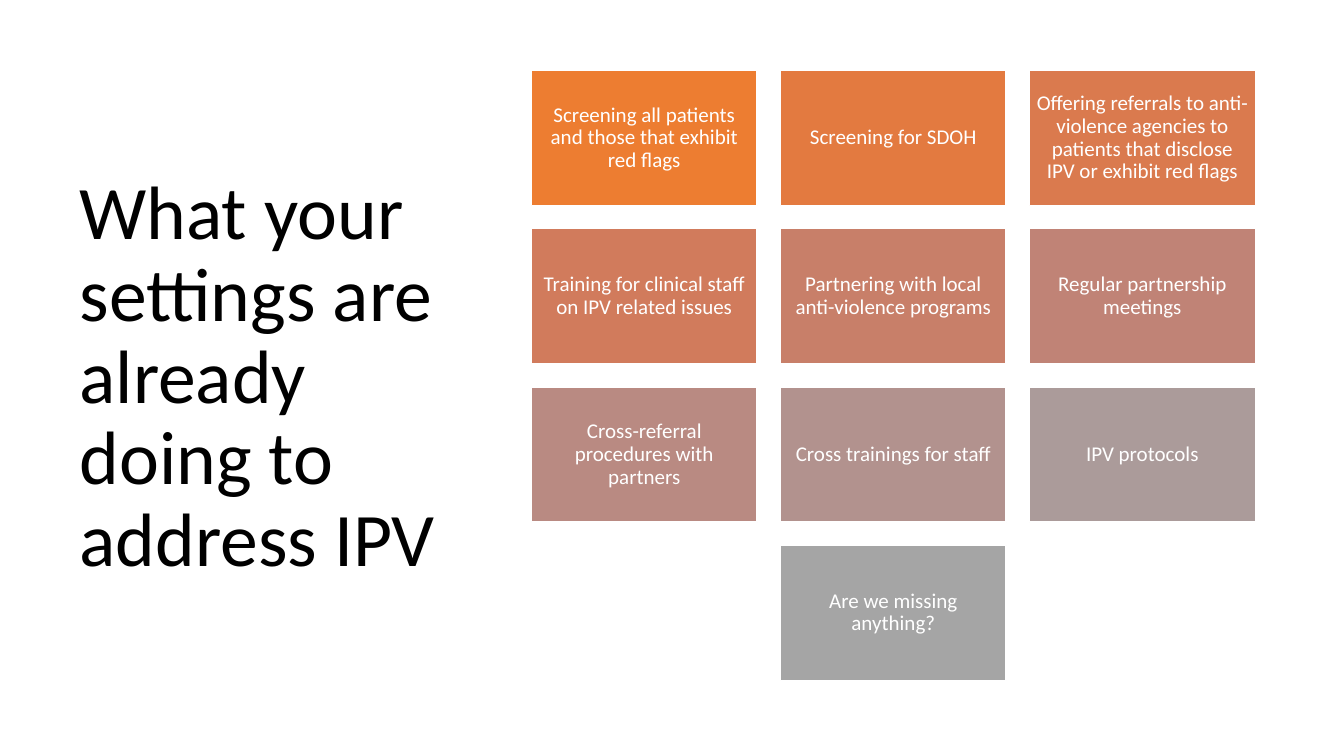
from pptx import Presentation
from pptx.dml.color import RGBColor
from pptx.enum.shapes import MSO_SHAPE
from pptx.enum.text import MSO_ANCHOR, PP_ALIGN
from pptx.util import Inches, Pt

BLACK = RGBColor(0x00, 0x00, 0x00)
WHITE = RGBColor(0xFF, 0xFF, 0xFF)

# Card wording with fills that fade from orange to grey
CARDS = [
    ("Screening all patients and those that exhibit red flags", RGBColor(0xED, 0x7D, 0x31)),
    ("Screening for SDOH", RGBColor(0xE3, 0x7A, 0x40)),
    ("Offering referrals to anti-violence agencies to patients that disclose "
     "IPV or exhibit red flags", RGBColor(0xDA, 0x7A, 0x4E)),
    ("Training for clinical staff on IPV related issues", RGBColor(0xD1, 0x7B, 0x5C)),
    ("Partnering with local anti-violence programs", RGBColor(0xC8, 0x7F, 0x69)),
    ("Regular partnership meetings", RGBColor(0xC0, 0x83, 0x76)),
    ("Cross-referral procedures with partners", RGBColor(0xB9, 0x8A, 0x82)),
    ("Cross trainings for staff", RGBColor(0xB2, 0x92, 0x8E)),
    ("IPV protocols", RGBColor(0xAB, 0x9B, 0x9A)),
    ("Are we missing anything?", RGBColor(0xA5, 0xA5, 0xA5)),
]

# Card grid, in inches
COLUMNS = 3
GRID_LEFT, GRID_TOP = 5.27, 0.7
CARD_WIDTH, CARD_HEIGHT = 2.24, 1.34
COLUMN_GAP, ROW_GAP = 0.23, 0.23


class SlideBuilder:
    """Holds the text style and the current page."""

    font_name = "Calibri"
    line_spacing = 0.9

    def __init__(self, page):
        self.page = page

    def add_text(self, frame, text, size, color, align):
        frame.word_wrap = True
        frame.vertical_anchor = MSO_ANCHOR.MIDDLE
        para = frame.paragraphs[0]
        para.alignment = align
        para.line_spacing = self.line_spacing
        span = para.add_run()
        span.text = text
        span.font.name = self.font_name
        span.font.size = Pt(size)
        span.font.color.rgb = color

    def title(self, text, left, top, width, height):
        box = self.page.shapes.add_textbox(
            Inches(left), Inches(top), Inches(width), Inches(height))
        self.add_text(box.text_frame, text, 54, BLACK, PP_ALIGN.LEFT)

    def card(self, text, fill, left, top):
        box = self.page.shapes.add_shape(
            MSO_SHAPE.RECTANGLE, Inches(left), Inches(top),
            Inches(CARD_WIDTH), Inches(CARD_HEIGHT))
        box.shadow.inherit = False
        box.fill.solid()
        box.fill.fore_color.rgb = fill
        box.line.color.rgb = WHITE
        box.line.width = Pt(1)
        frame = box.text_frame
        frame.margin_left = frame.margin_right = Inches(0.06)
        frame.margin_top = frame.margin_bottom = Inches(0.06)
        self.add_text(frame, text, 15, WHITE, PP_ALIGN.CENTER)


def main():
    deck = Presentation()
    deck.slide_width, deck.slide_height = Inches(13.33), Inches(7.5)
    builder = SlideBuilder(deck.slides.add_slide(deck.slide_layouts[6]))

    # Title on the left
    builder.title("What your settings are already doing to address IPV",
                  0.69, 0.7, 3.74, 6.11)

    # Cards on the right, with a short last row centred
    for index, (text, fill) in enumerate(CARDS):
        row, column = divmod(index, COLUMNS)
        cards_in_row = min(COLUMNS, len(CARDS) - row * COLUMNS)
        column += (COLUMNS - cards_in_row) / 2
        builder.card(text, fill,
                     GRID_LEFT + column * (CARD_WIDTH + COLUMN_GAP),
                     GRID_TOP + row * (CARD_HEIGHT + ROW_GAP))

    deck.save("out.pptx")


if __name__ == "__main__":
    main()
